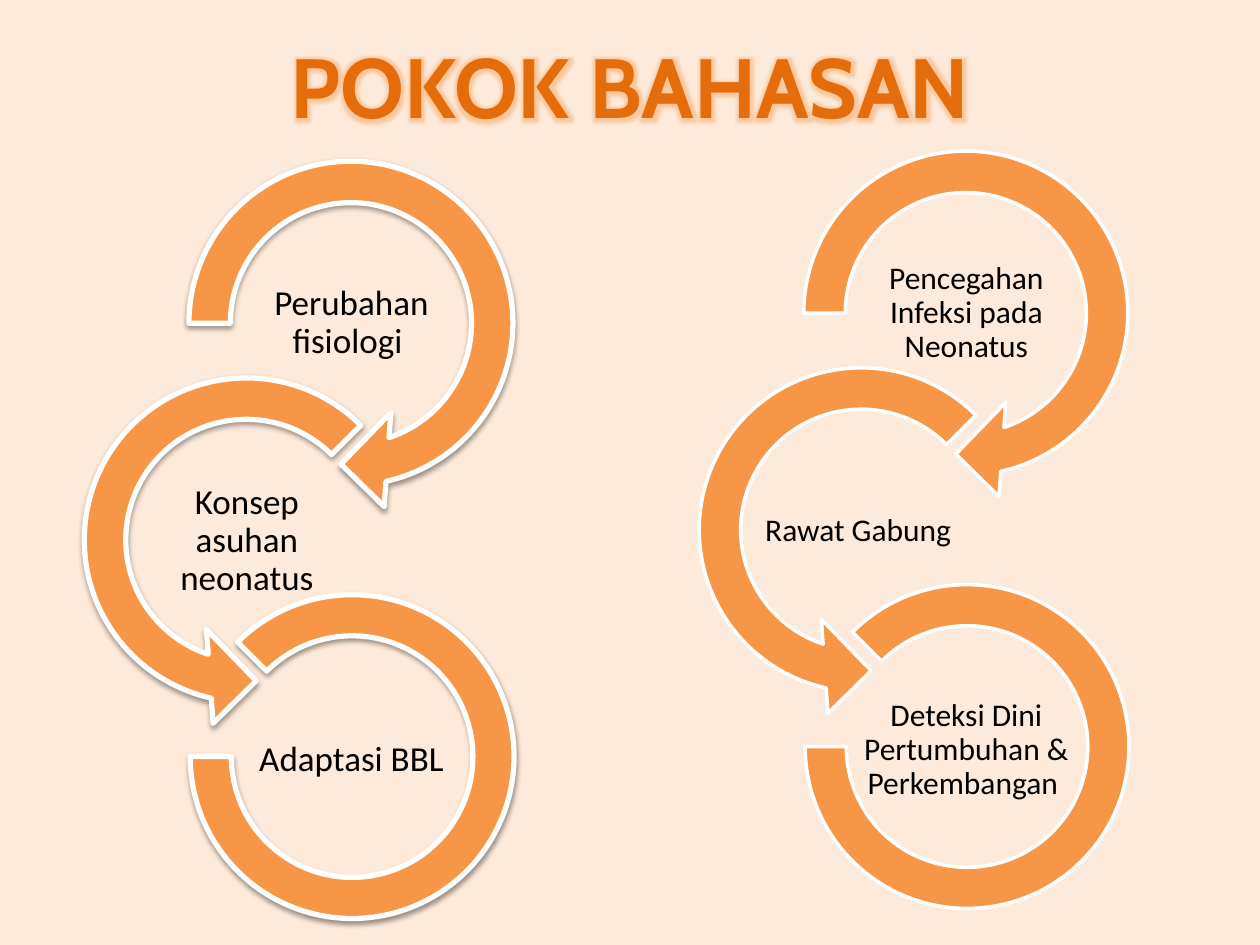
from typing import NamedTuple

from lxml.etree import SubElement as Sub
from pptx import Presentation
from pptx.dml.color import RGBColor as Rgb
from pptx.enum.shapes import MSO_SHAPE as Shape
from pptx.enum.text import MSO_ANCHOR as Anchor, PP_ALIGN as Align
from pptx.oxml.ns import qn
from pptx.util import Inches, Pt

CREAM = Rgb(0xFD, 0xEA, 0xDA)
ORANGE = Rgb(0xF7, 0x96, 0x46)
DARK = Rgb(0xE4, 0x6C, 0x0A)
WHITE = Rgb(0xFF, 0xFF, 0xFF)
BLACK = Rgb(0, 0, 0)


class Ring(NamedTuple):
    kind: Shape
    x: float
    y: float
    size: float
    adjust: tuple[float, ...]
    text_x: float
    text_y: float


class Chain(NamedTuple):
    dx: float
    dy: float
    font: int
    line: int
    shade: bool
    labels: tuple[str, ...]


RINGS = (
    Ring(Shape.CIRCULAR_ARROW, 1.29, 1.07, 2.99,
         (0.11, 11.42, 45, 108, 0.125), 1.96, 2.15),
    Ring(Shape.LEFT_CIRCULAR_ARROW, 0.46, 2.79, 2.99,
         (0.11, 11.42, 63, 189, 0.125), 1.13, 3.88),
    Ring(Shape.BLOCK_ARC, 1.51, 4.72, 2.57, (135, 108, 0.127), 1.96, 5.62),
)
CHAINS = (
    Chain(0, 0, 20, 3, True,
          ("Perubahan fisiologi ", "Konsep asuhan neonatus", "Adaptasi BBL")),
    Chain(4.88, -0.08, 18, 2, False,
          ("Pencegahan Infeksi pada Neonatus", "Rawat Gabung ",
           "Deteksi Dini Pertumbuhan & Perkembangan ")),
)


def add_effect(parent, kind: str, color: Rgb, alpha: int, **attrs: int) -> None:
    effect = Sub(parent, qn(f"a:{kind}"),
                 {key: str(value) for key, value in attrs.items()})
    tint = Sub(effect, qn("a:srgbClr"), val=str(color))
    Sub(tint, qn("a:alpha"), val=str(alpha * 1000))


def add_text(slide, text: str, x: float, y: float, w: float, h: float,
             inset: float, size: int, face: str, color: Rgb):
    frame = slide.shapes.add_textbox(
        Inches(x), Inches(y), Inches(w), Inches(h)).text_frame
    frame.word_wrap = True
    frame.vertical_anchor = Anchor.MIDDLE
    frame.margin_left = frame.margin_right = Inches(inset)
    frame.margin_top = frame.margin_bottom = Inches(min(inset, 0.05))
    para = frame.paragraphs[0]
    para.text = text
    para.alignment = Align.CENTER
    para.font.size = Pt(size)
    para.font.name = face
    para.font.color.rgb = color
    return para


def add_title(slide) -> None:
    para = add_text(slide, "POKOK BAHASAN", 0.5, 0.05, 9, 1.25,
                    0.1, 48, "Cabin", DARK)
    para.font.bold = True
    props = para.runs[0].font._element
    add_effect(Sub(props, qn("a:effectLst")), "glow", ORANGE, 40, rad=Pt(8))


def add_ring(slide, ring: Ring, chain: Chain, label: str) -> None:
    shape = slide.shapes.add_shape(
        ring.kind, Inches(ring.x + chain.dx), Inches(ring.y + chain.dy),
        Inches(ring.size), Inches(ring.size))
    for index, value in enumerate(ring.adjust):
        shape.adjustments[index] = value
    shape.fill.solid()
    shape.fill.fore_color.rgb = ORANGE
    shape.line.color.rgb = WHITE
    shape.line.width = Pt(chain.line)
    shape.shadow.inherit = False
    if chain.shade:
        effects = shape._element.spPr.find(qn("a:effectLst"))
        add_effect(effects, "outerShdw", BLACK, 38, blurRad=Pt(3.1),
                   dist=Pt(1.6), dir=90 * 60000, rotWithShape=0)
    para = add_text(slide, label, ring.text_x + chain.dx,
                    ring.text_y + chain.dy, 1.66, 0.83,
                    0.01, chain.font, "Calibri", BLACK)
    para.line_spacing = 0.9


def main() -> None:
    deck = Presentation()
    deck.slide_width, deck.slide_height = Inches(10), Inches(7.5)
    slide = deck.slides.add_slide(deck.slide_layouts[6])
    slide.background.fill.solid()
    slide.background.fill.fore_color.rgb = CREAM
    add_title(slide)
    for chain in CHAINS:
        for ring, label in zip(RINGS, chain.labels):
            add_ring(slide, ring, chain, label)
    deck.save("out.pptx")


if __name__ == "__main__":
    main()
